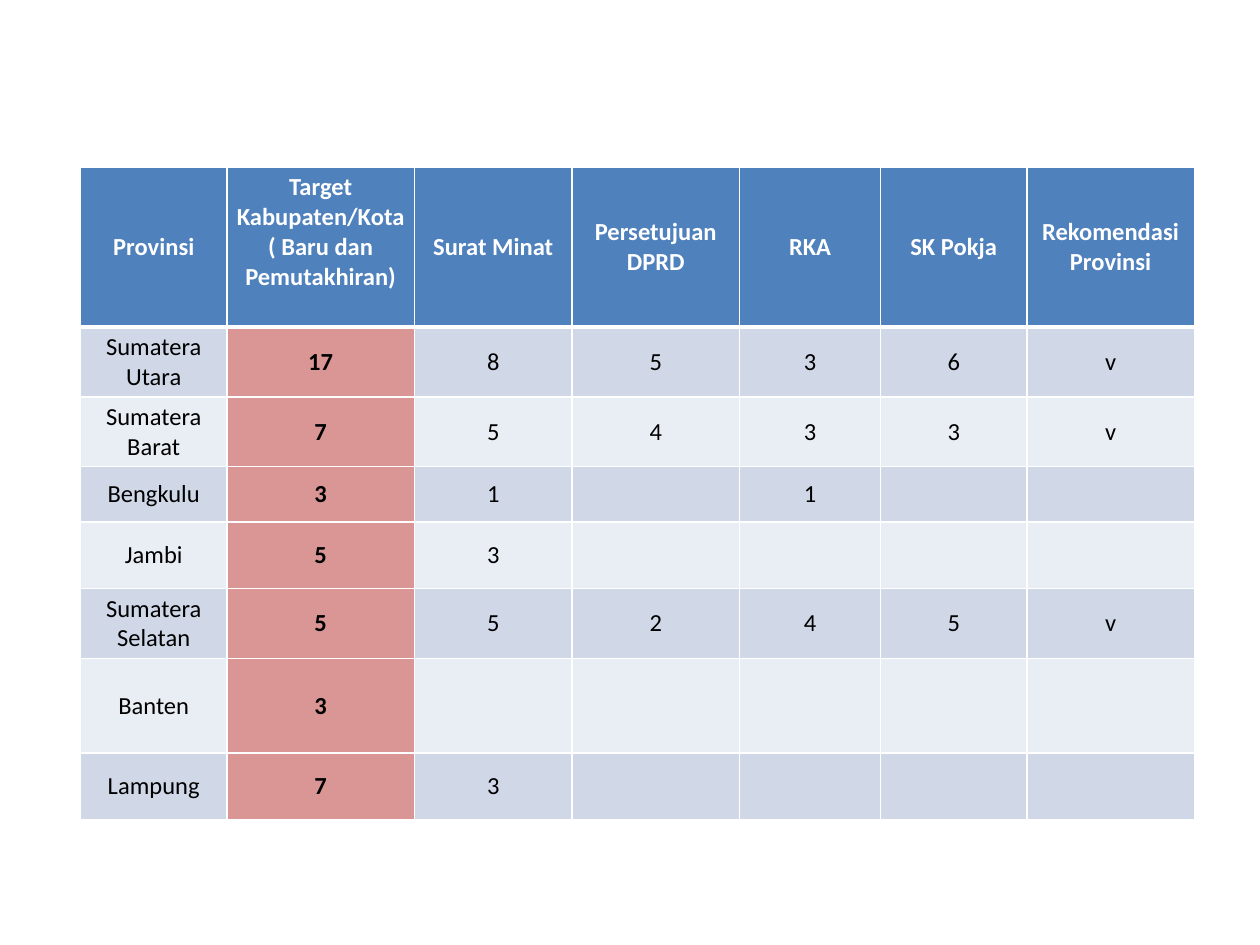
from pptx import Presentation
from pptx import util as u
from pptx.dml.color import RGBColor
from pptx.enum import text
from pptx.oxml import parse_xml
from pptx.oxml.ns import nsdecls

WHITE, BLACK = "FFFFFF", "000000"
HEADER_FILL, TARGET_FILL = "4F81BD", "D99694"
BAND_FILLS = ("D0D8E8", "E9EDF4")
TARGET_COLUMN = 1
COLUMN_WIDTHS = (1.16, 1.49, 1.25, 1.33, 1.12, 1.16, 1.33)
ROW_HEIGHTS = (1.24, 0.55, 0.55, 0.44, 0.53, 0.55, 0.75, 0.53)
HEADERS = (
    "Provinsi",
    "Target Kabupaten/Kota ( Baru dan Pemutakhiran)",
    "Surat Minat",
    "Persetujuan DPRD",
    "RKA",
    "SK Pokja",
    "Rekomendasi Provinsi",
)
PROVINCES = (
    ("Sumatera Utara", "17", "8", "5", "3", "6", "v"),
    ("Sumatera Barat", "7", "5", "4", "3", "3", "v"),
    ("Bengkulu", "3", "1", "", "1", "", ""),
    ("Jambi", "5", "3", "", "", "", ""),
    ("Sumatera Selatan", "5", "5", "2", "4", "5", "v"),
    ("Banten", "3", "", "", "", "", ""),
    ("Lampung", "7", "3", "", "", "", ""),
)


def color(hex_value):
    return RGBColor.from_string(hex_value)


def write_text(frame, content, *, size=14, bold=False, hex_color=BLACK):
    paragraph = frame.paragraphs[0]
    paragraph.alignment = text.PP_ALIGN.CENTER
    paragraph.font.size = u.Pt(size)
    if content:
        run = paragraph.add_run()
        run.text = content
        run.font.name = "Calibri"
        run.font.size = u.Pt(size)
        run.font.bold = bold
        run.font.color.rgb = color(hex_color)


def set_borders(cell, **widths):
    properties = cell._tc.get_or_add_tcPr()
    for index, side in enumerate("LRTB"):
        width = u.Pt(widths.get(side, 1))
        properties.insert(index, parse_xml(
            f'<a:ln{side} {nsdecls("a")} w="{width}"><a:solidFill>'
            f'<a:srgbClr val="{WHITE}"/></a:solidFill></a:ln{side}>'))


def format_cell(cell, content, fill, **text_format):
    cell.fill.solid()
    cell.fill.fore_color.rgb = color(fill)
    cell.vertical_anchor = text.MSO_ANCHOR.MIDDLE
    cell.margin_left = cell.margin_right = u.Inches(0.07)
    cell.margin_top = cell.margin_bottom = u.Inches(0.04)
    write_text(cell.text_frame, content, **text_format)


def add_province_table(slide):
    table = slide.shapes.add_table(
        len(ROW_HEIGHTS), len(COLUMN_WIDTHS), u.Inches(0.64), u.Inches(1.33),
        u.Inches(sum(COLUMN_WIDTHS)), u.Inches(sum(ROW_HEIGHTS))).table
    for column, width in zip(table.columns, COLUMN_WIDTHS):
        column.width = u.Inches(width)
    for row, height in zip(table.rows, ROW_HEIGHTS):
        row.height = u.Inches(height)

    for column_index, header in enumerate(HEADERS):
        cell = table.cell(0, column_index)
        format_cell(cell, header, HEADER_FILL, bold=True, hex_color=WHITE)
        set_borders(cell, B=3)
    table.cell(0, TARGET_COLUMN).margin_bottom = u.Inches(0.28)

    for row_index, values in enumerate(PROVINCES, start=1):
        band_fill = BAND_FILLS[(row_index - 1) % 2]
        for column_index, value in enumerate(values):
            cell = table.cell(row_index, column_index)
            is_target = column_index == TARGET_COLUMN
            fill = TARGET_FILL if is_target else band_fill
            format_cell(cell, value, fill, bold=is_target)
            set_borders(cell, T=3 if row_index == 1 else 1)


def main():
    presentation = Presentation()
    presentation.slide_width = u.Inches(10)
    presentation.slide_height = u.Inches(7.5)
    slide = presentation.slides.add_slide(presentation.slide_layouts[6])
    add_province_table(slide)
    presentation.save("out.pptx")


if __name__ == "__main__":
    main()
